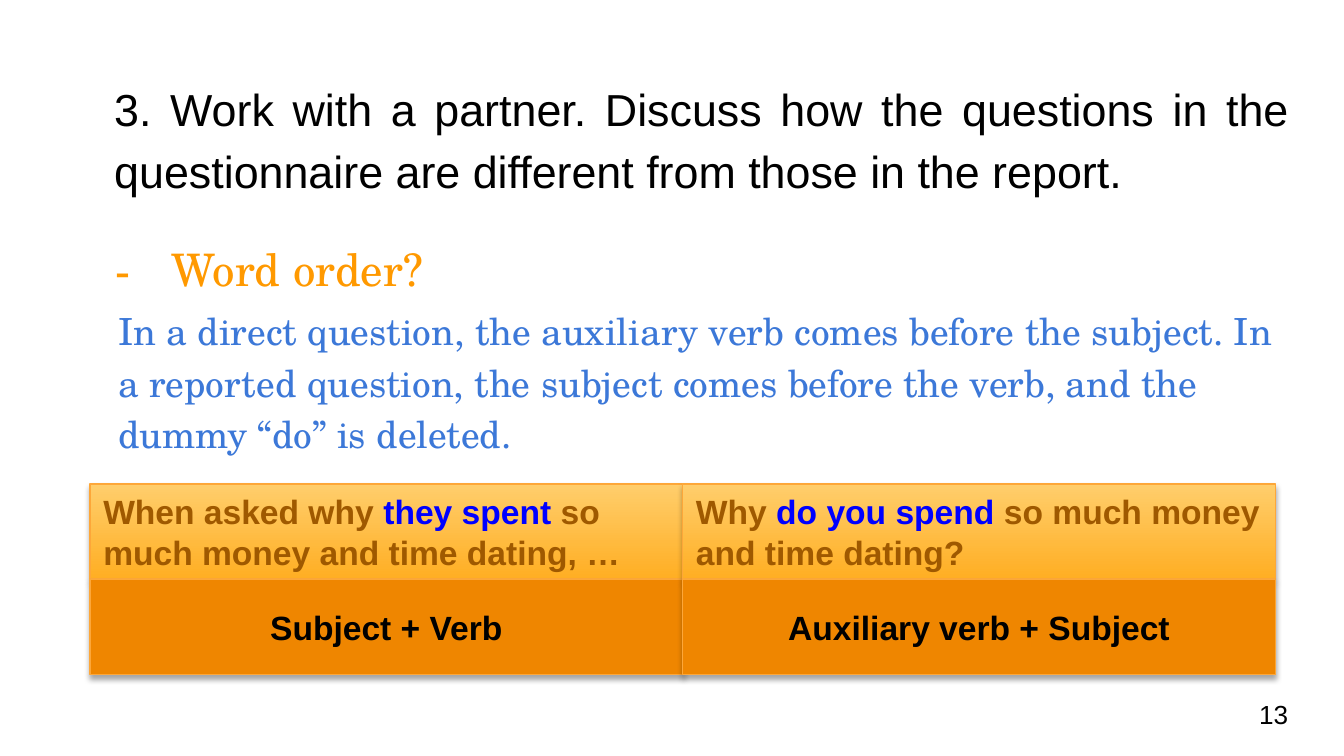
from lxml import etree
from pptx import Presentation, util as u
from pptx.dml.color import RGBColor
from pptx.enum import shapes as sh, text as tx
from pptx.oxml.ns import qn

BLACK = RGBColor(0, 0, 0)
AMBER = RGBColor(0xFF, 0x99, 0x00)
SKY = RGBColor(0x3C, 0x78, 0xD8)
BLUE = RGBColor(0, 0, 0xFF)
BROWN = RGBColor(0x9F, 0x59, 0x00)
DARK = RGBColor(0xEF, 0x86, 0x00)
LOW = RGBColor(0xFF, 0xAE, 0x23)
HIGH = RGBColor(0xFF, 0xCE, 0x6C)
EDGE = RGBColor(0xFD, 0xA7, 0x39)
SANS, SERIF = "Arial", "TeX Gyre Schola"

# Content
TASK = ("3. Work with a partner. Discuss how the questions in the "
        "questionnaire are different from those in the report.")
POINT = "Word order?"
RULE = ("In a direct question, the auxiliary verb comes before the subject. "
        "In a reported question, the subject comes before the verb, "
        "and the dummy “do” is deleted.")
PAGE = "13"
CARDS = [
    ([("When asked why ", BROWN), ("they spent ", BLUE),
      ("so much money and time dating, …", BROWN)], "Subject + Verb"),
    ([("Why ", BROWN), ("do you spend ", BLUE),
      ("so much money and time dating?", BROWN)], "Auxiliary verb + Subject"),
]

# Card grid, in inches
LEFT, TOP, WIDE, HIGHT = 0.67, 3.6, 4.41, 0.71

JUST, MID = tx.PP_ALIGN.JUSTIFY, tx.MSO_ANCHOR.MIDDLE


def write(shape, runs, size, font=SANS, bold=False, align=tx.PP_ALIGN.LEFT,
          anchor=MID, lead=None, pad=0.1, foot=None):
    frame = shape.text_frame
    frame.word_wrap = True
    frame.auto_size = tx.MSO_AUTO_SIZE.NONE
    frame.vertical_anchor = anchor
    frame.margin_left = frame.margin_right = u.Inches(0.1)
    frame.margin_top = u.Inches(pad)
    frame.margin_bottom = u.Inches(pad if foot is None else foot)
    para = frame.paragraphs[0]
    para.alignment = align
    if lead:
        para.line_spacing = lead
    for words, color in runs:
        run = para.add_run()
        run.text = words
        run.font.name, run.font.size = font, u.Pt(size)
        run.font.bold, run.font.color.rgb = bold, color
    return para


def box(slide, *place):
    return slide.shapes.add_textbox(*map(u.Inches, place))


def bullet(para, mark, color, font):
    props = para._p.get_or_add_pPr()
    props.set("marL", str(u.Inches(0.5)))
    props.set("indent", str(u.Inches(-0.42)))
    tint = etree.SubElement(props, qn("a:buClr"))
    etree.SubElement(tint, qn("a:srgbClr"), val=str(color))
    etree.SubElement(props, qn("a:buFont"), typeface=font)
    etree.SubElement(props, qn("a:buChar"), char=mark)


def shade(shape):
    shape.shadow.inherit = False
    effects = shape._element.spPr.find(qn("a:effectLst"))
    drop = etree.SubElement(effects, qn("a:outerShdw"),
                            blurRad=str(u.Pt(3.1)), dist=str(u.Pt(1.8)),
                            dir="5400000", rotWithShape="0")
    tint = etree.SubElement(drop, qn("a:srgbClr"), val=str(BLACK))
    etree.SubElement(tint, qn("a:alpha"), val="35000")


def tile(group, col, row):
    place = LEFT + col * WIDE, TOP + row * HIGHT, WIDE, HIGHT
    shape = group.shapes.add_shape(sh.MSO_SHAPE.RECTANGLE,
                                   *map(u.Inches, place))
    if row:
        shape.fill.solid()
        shape.fill.fore_color.rgb = DARK
    else:
        shape.fill.gradient()
        shape.fill.gradient_angle = 90
        for stop, color in zip(shape.fill.gradient_stops, (LOW, HIGH)):
            stop.color.rgb = color
    shape.line.color.rgb = EDGE
    shape.line.width = u.Pt(0.75)
    shade(shape)
    return shape


def main():
    # A 16:9 slide
    deck = Presentation()
    deck.slide_width = u.Inches(10)
    deck.slide_height = deck.slide_width * 9 // 16
    slide = deck.slides.add_slide(deck.slide_layouts[5])

    # Task heading
    head = slide.shapes.title
    head.left, head.top = u.Inches(0.75), u.Inches(0.45)
    head.width, head.height = u.Inches(8.94), u.Inches(1.1)
    write(head, [(TASK, BLACK)], 24, align=JUST,
          anchor=tx.MSO_ANCHOR.TOP, lead=1.15)

    # Rule, lifted by a deep bottom margin, and its bullet
    write(box(slide, 0.78, 2.66, 8.98, 0.78), [(RULE, SKY)], 20, SERIF,
          lead=1.15, foot=0.56)
    para = write(box(slide, 0.68, 1.71, 9.05, 0.52), [(POINT, AMBER)], 24,
                 SERIF, align=JUST, lead=1.15)
    bullet(para, "-", AMBER, SERIF)

    # Page number
    write(box(slide, 9.27, 5.1, 0.6, 0.43), [(PAGE, BLACK)], 14)

    # Example cards
    for col, (quote, order) in enumerate(CARDS):
        group = slide.shapes.add_group_shape()
        write(tile(group, col, 0), quote, 18, bold=True, pad=0.05)
        write(tile(group, col, 1), [(order, BLACK)], 18, bold=True,
              align=tx.PP_ALIGN.CENTER, pad=0.05)

    deck.save("out.pptx")


if __name__ == "__main__":
    main()
